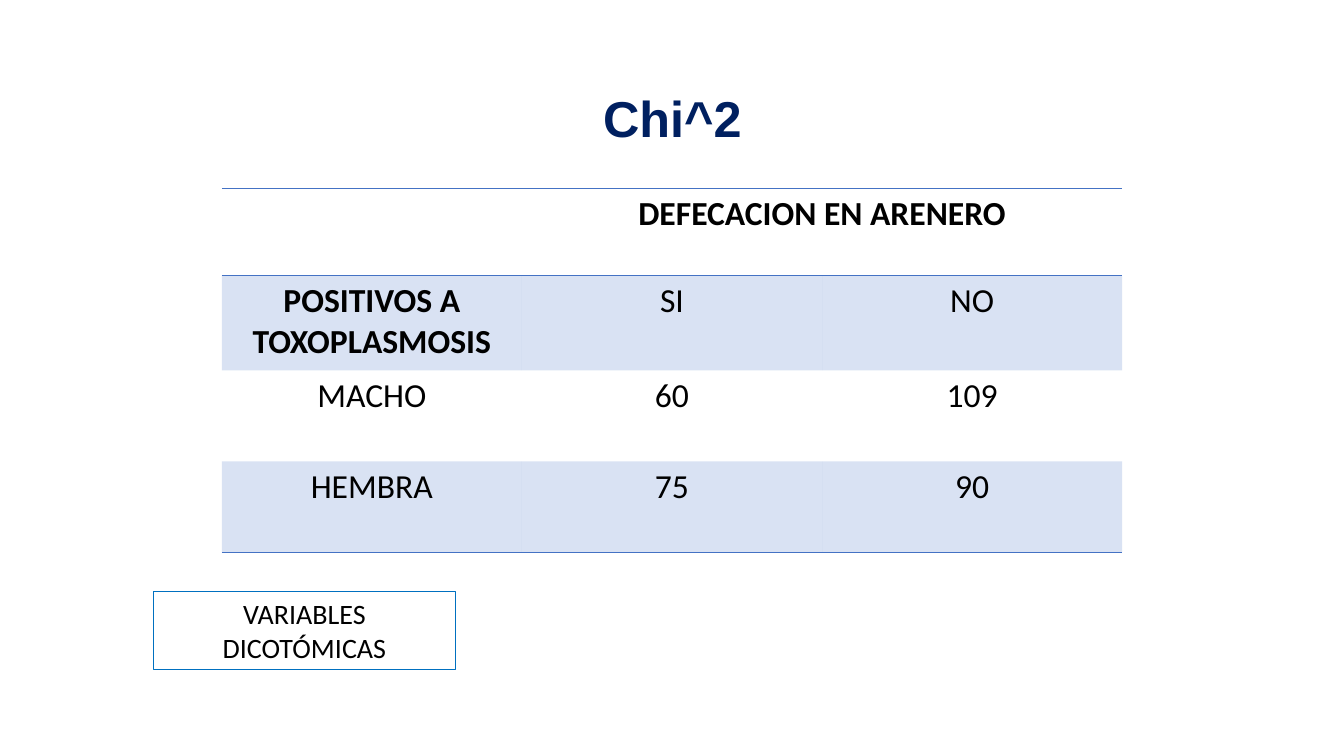
from dataclasses import dataclass
from lxml.etree import SubElement
from pptx import Presentation
from pptx.dml.color import RGBColor as Color
from pptx.enum.shapes import MSO_SHAPE as Shape
from pptx.enum.text import MSO_ANCHOR as Anchor, MSO_AUTO_SIZE as AutoSize, PP_ALIGN as Align
from pptx.oxml import parse_xml
from pptx.oxml.ns import nsdecls, qn
from pptx.util import Inches, Pt


@dataclass(frozen=True)
class Theme:
    heading_font: str = "Arial"
    body_font: str = "Calibri"
    title_size: int = 36
    table_size: int = 24
    note_size: int = 20
    title_color: str = "002060"
    text_color: str = "000000"
    accent: str = "4472C4"
    note_line: str = "0070C0"
    band_opacity: int = 20


THEME = Theme()
TITLE_BOX = (9.08, 10.8, 81.9, 9.47)
TABLE_BOX = (16.5, 24.93, 67, 48.13)
NOTE_BOX = (11.4, 78.27, 22.5, 10.27)
ROW_SHARES = (0.24, 0.26, 0.25, 0.25)
PLAIN_TABLE_STYLE = "{2D5ABB26-0587-4C30-8999-92F81FD0307C}"
HEADER = "DEFECACION EN ARENERO"
ROW_TITLE = "POSITIVOS A TOXOPLASMOSIS"
ROWS = (
    ("", HEADER, ""),
    (ROW_TITLE, "SI", "NO"),
    ("MACHO", "60", "109"),
    ("HEMBRA", "75", "90"),
)


def place(deck, percent):
    left, top, width, height = percent
    wide, high = deck.slide_width, deck.slide_height
    return [int(side * share / 100) for side, share in
            ((wide, left), (high, top), (wide, width), (high, height))]


def write(frame, text, font, size, color, bold=False):
    para = frame.paragraphs[0]
    para.text = text
    para.alignment = Align.CENTER
    para.font.name = font
    para.font.size = Pt(size)
    para.font.bold = bold
    para.font.color.rgb = Color.from_string(color)


def add_title(page, box, text):
    title = page.shapes.title
    title.left, title.top, title.width, title.height = box
    frame = title.text_frame
    frame.word_wrap = True
    frame.auto_size = AutoSize.NONE
    frame.vertical_anchor = Anchor.MIDDLE
    write(frame, text, THEME.heading_font, THEME.title_size, THEME.title_color, True)


def tint(cell):
    cell.fill.solid()
    cell.fill.fore_color.rgb = Color.from_string(THEME.accent)
    color = cell._tc.tcPr.find(".//" + qn("a:srgbClr"))
    SubElement(color, qn("a:alpha")).set("val", str(THEME.band_opacity * 1000))


def rule(cell, sides):
    for position, side in enumerate(sides):
        line = parse_xml(
            f'<a:ln{side} {nsdecls("a")} w="{Pt(1)}"><a:solidFill>'
            f'<a:srgbClr val="{THEME.accent}"/></a:solidFill></a:ln{side}>')
        cell._tc.get_or_add_tcPr().insert(position, line)


def add_contingency_table(page, box, rows):
    table = page.shapes.add_table(len(rows), len(rows[0]), *box).table
    table.first_row = table.horz_banding = False
    table._tbl.tblPr.find(qn("a:tableStyleId")).text = PLAIN_TABLE_STYLE
    for row, share in zip(table.rows, ROW_SHARES):
        row.height = int(box[3] * share)
    table.cell(0, 1).merge(table.cell(0, 2))
    borders = {0: "TB", len(rows) - 1: "B"}
    for row_number, values in enumerate(rows):
        for column, value in enumerate(values):
            cell = table.cell(row_number, column)
            if row_number % 2:
                tint(cell)
            else:
                cell.fill.background()
            rule(cell, borders.get(row_number, ""))
            if value:
                write(cell.text_frame, value, THEME.body_font, THEME.table_size,
                      THEME.text_color, value in (HEADER, ROW_TITLE))


def add_note(page, box, text):
    note = page.shapes.add_shape(Shape.RECTANGLE, *box)
    note.shadow.inherit = False
    note.fill.background()
    note.line.color.rgb = Color.from_string(THEME.note_line)
    note.line.width = Pt(0.75)
    note.text_frame.word_wrap = True
    note.text_frame.vertical_anchor = Anchor.MIDDLE
    write(note.text_frame, text, THEME.body_font, THEME.note_size, THEME.text_color)


def main():
    deck = Presentation()
    deck.slide_width, deck.slide_height = Inches(13.33), Inches(7.5)
    page = deck.slides.add_slide(deck.slide_layouts.get_by_name("Title Only"))
    add_title(page, place(deck, TITLE_BOX), "Chi^2")
    add_contingency_table(page, place(deck, TABLE_BOX), ROWS)
    add_note(page, place(deck, NOTE_BOX), "VARIABLES DICOTÓMICAS")
    deck.save("out.pptx")


if __name__ == "__main__":
    main()
